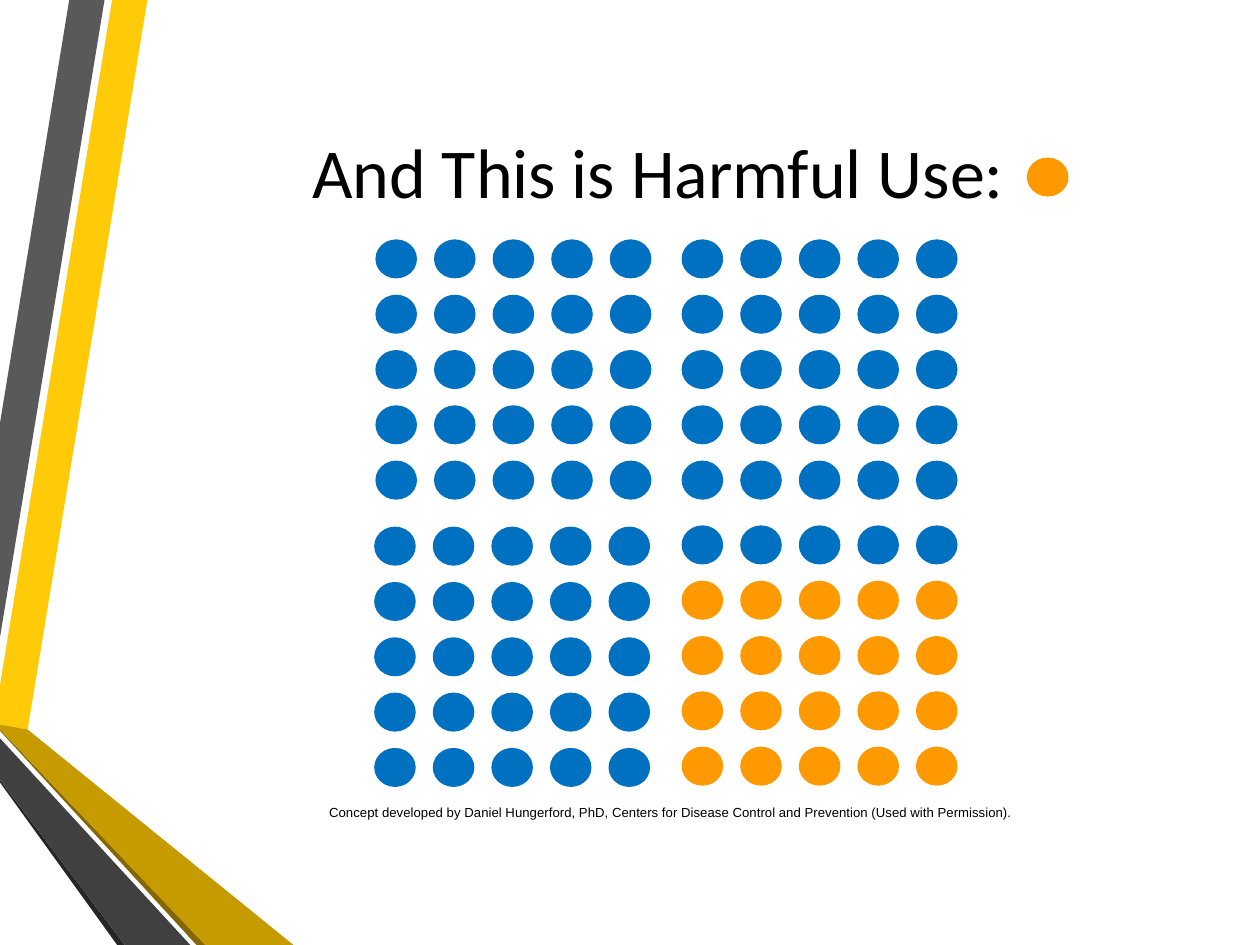
import pptx
import pptx.util
import pptx.dml.color
import pptx.enum.shapes
import pptx.enum.text

COLORS = {
    "yellow": "FFCA08", "gray": "595959", "black": "262626", "olive": "846700",
    "gold": "C59B00", "charcoal": "404040",
    "blue": "0070C0", "orange": "FF9900", "text": "000000",
}

deck = pptx.Presentation()
deck.slide_width = pptx.util.Inches(10)
deck.slide_height = pptx.util.Inches(7.5)
page = deck.slides.add_slide(deck.slide_layouts[6])
COLUMN = deck.slide_width / 100
ROW = deck.slide_height / 75


def place(left, top, width, height):
    return [round(left * COLUMN), round(top * ROW), round(width * COLUMN), round(height * ROW)]


def paint(shape, color):
    shape.shadow.inherit = False
    shape.fill.solid()
    shape.fill.fore_color.rgb = pptx.dml.color.RGBColor.from_string(COLORS[color])
    shape.line.fill.background()


ribbons = [
    ("yellow", [(0, 54.4), (0, 57.5), (2.2, 57.9), (11.7, 0), (8.9, 0)]),
    ("gray", [(8.3, 0), (5.5, 0), (0, 33.6), (0, 50.6)]),
    ("black", [(0, 61.9), (0, 62.1), (9.3, 75), (9.9, 75)]),
    ("olive", [(0, 57.9), (0, 58), (15.6, 75), (16.3, 75)]),
    ("gold", [(0, 57.9), (16.3, 75), (23.3, 75), (2.2, 57.9), (0, 57.5)]),
    ("charcoal", [(0, 61.9), (9.9, 75), (15.1, 75), (0, 58.6)]),
]
for color, corners in ribbons:
    points = [(x * COLUMN, y * ROW) for x, y in corners]
    outline = page.shapes.build_freeform(*points[0])
    outline.add_line_segments(points[1:], close=True)
    paint(outline.convert_to_shape(), color)

blocks = [
    (54.1, 19, ["blue"] * 5),
    (54.1, 41.7, ["blue"] + ["orange"] * 4),
    (29.8, 19, ["blue"] * 5),
    (29.7, 41.8, ["blue"] * 5),
]
dots = [
    (left + 4.65 * column, top + 4.39 * row, color)
    for left, top, row_colors in blocks
    for row, color in enumerate(row_colors)
    for column in range(5)
]
dots.append((81.5, 12.5, "orange"))
for left, top, color in dots:
    dot = page.shapes.add_shape(
        pptx.enum.shapes.MSO_SHAPE.OVAL, *place(left, top, 3.3, 3.1))
    paint(dot, color)

texts = [
    ((10.7, 5, 84.3, 17), "And This is Harmful Use: ",
     {"name": "Calibri", "size": pptx.util.Pt(40)}),
    ((24.2, 63.3, 58, 2.3),
     "Concept developed by Daniel Hungerford, PhD, Centers for Disease Control "
     "and Prevention (Used with Permission).",
     {"name": "Arial", "size": pptx.util.Pt(7.5)}),
]
for area, wording, font_format in texts:
    box = page.shapes.add_textbox(*place(*area))
    box.text_frame.word_wrap = True
    box.text_frame.vertical_anchor = pptx.enum.text.MSO_ANCHOR.MIDDLE
    para = box.text_frame.paragraphs[0]
    para.alignment = pptx.enum.text.PP_ALIGN.CENTER
    span = para.add_run()
    span.text = wording
    for attribute, value in font_format.items():
        setattr(span.font, attribute, value)
    span.font.color.rgb = pptx.dml.color.RGBColor.from_string(COLORS["text"])

deck.save("out.pptx")
